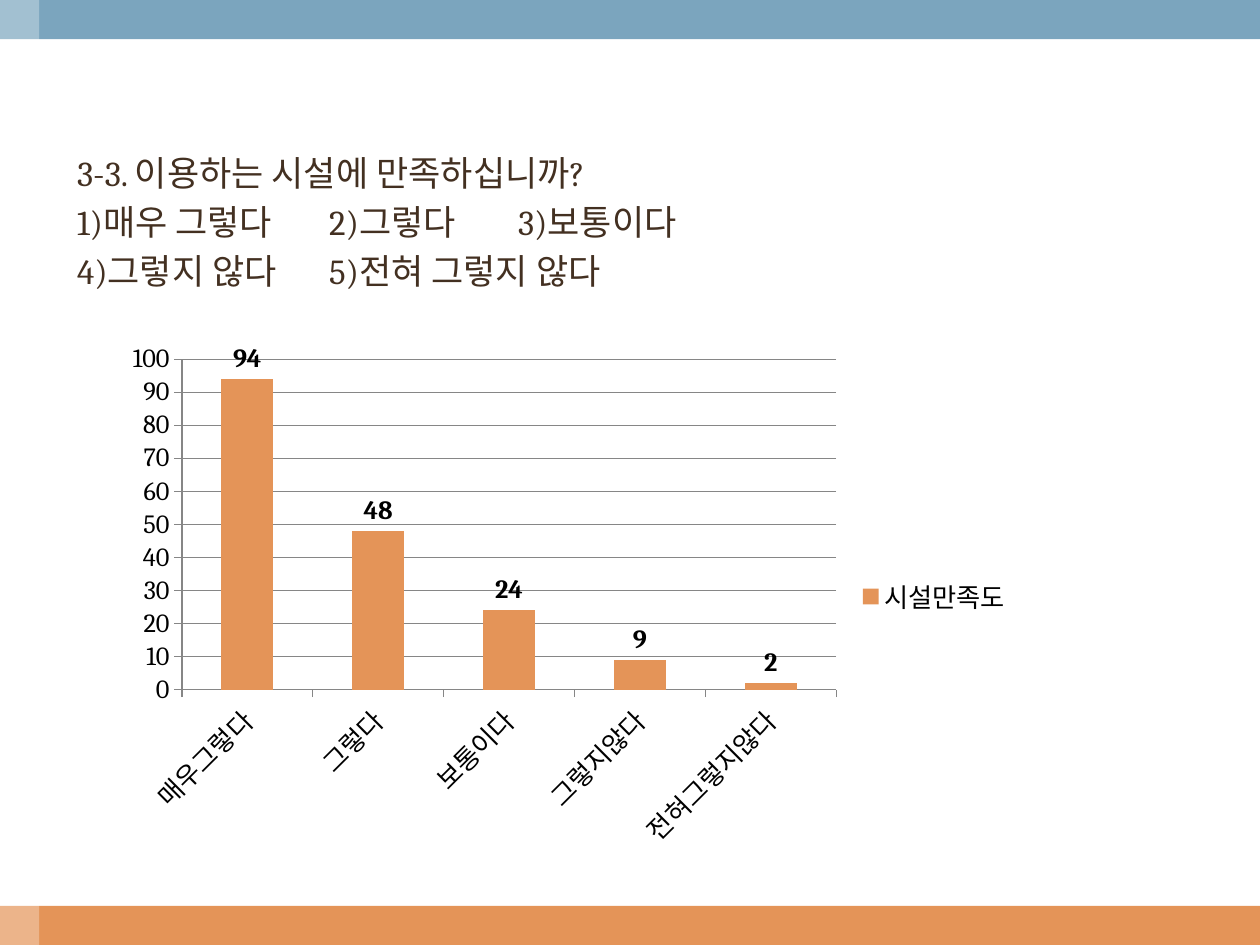
from lxml.etree import SubElement
from pptx import Presentation
from pptx.chart.data import CategoryChartData
from pptx.dml.color import RGBColor
from pptx.enum.chart import XL_CHART_TYPE, XL_LABEL_POSITION, XL_LEGEND_POSITION, XL_TICK_MARK
from pptx.enum.shapes import MSO_SHAPE
from pptx.enum.text import MSO_ANCHOR, MSO_AUTO_SIZE
from pptx.oxml.ns import qn
from pptx.util import Cm, Pt

ORANGE = RGBColor(0xE4, 0x94, 0x58)
BLUE = RGBColor(0x7B, 0xA5, 0xBE)
WHITE = RGBColor(0xFF, 0xFF, 0xFF)
BROWN = RGBColor(0x43, 0x30, 0x21)
BLACK = RGBColor(0, 0, 0)
GRAY = RGBColor(0x86, 0x86, 0x86)
FONT = "Cambria"


def write_line(paragraph, text, size=20, color=BROWN, tabs=()):
    """Write an unbulleted line whose columns start at the given tab stops."""
    run = paragraph.add_run()
    run.text = text
    run.font.name = FONT
    run.font.size = Pt(size)
    run.font.color.rgb = color
    paragraph.space_before = Pt(size * 0.2)
    properties = paragraph._p.get_or_add_pPr()
    properties.set("marL", "0")
    properties.set("indent", "0")
    SubElement(properties, qn("a:buNone"))
    if tabs:
        stops = SubElement(properties, qn("a:tabLst"))
        for position in tabs:
            SubElement(stops, qn("a:tab"), pos=str(Cm(position)), algn="l")


presentation = Presentation()
presentation.slide_width = Cm(25.4)
presentation.slide_height = Cm(19.05)
slide = presentation.slides.add_slide(presentation.slide_layouts[1])
title = slide.shapes.title
title._element.getparent().remove(title._element)

# Bands at the edges, with a pale strip down the left
band = 0.79
for left, top, width, height, color in (
    (0, 19.05 - band, 25.4, band, ORANGE),
    (0, 0, 25.4, band, BLUE),
    (0, 0, band, 19.05, WHITE),
):
    strip = slide.shapes.add_shape(
        MSO_SHAPE.RECTANGLE, Cm(left), Cm(top), Cm(width), Cm(height))
    strip.shadow.inherit = False
    strip.fill.solid()
    strip.fill.fore_color.rgb = color
    strip.line.fill.background()
strip_color = strip.fill._xPr.find(qn("a:solidFill"))[0]
SubElement(strip_color, qn("a:alpha"), val="30000")

# Question and its answer options
question = slide.placeholders[1]
question.left, question.top = Cm(1.3), Cm(1.93)
question.width, question.height = Cm(22.86), Cm(15.6)
question_frame = question.text_frame
question_frame.auto_size = MSO_AUTO_SIZE.NONE
question_frame.vertical_anchor = MSO_ANCHOR.TOP
question_frame.margin_top = Cm(1.12)
for index, (text, tabs) in enumerate((
    ("3-3. 이용하는 시설에 만족하십니까?", ()),
    ("1)매우 그렇다\t2)그렇다\t3)보통이다", (8.25, 15.1)),
    ("4)그렇지 않다\t5)전혀 그렇지 않다", (7.75,)),
)):
    line = question_frame.add_paragraph() if index else question_frame.paragraphs[0]
    write_line(line, text, tabs=tabs)

# Satisfaction chart
answers = CategoryChartData()
answers.categories = ["매우그렇다", "그렇다", "보통이다", "그렇지않다", "전혀그렇지않다"]
answers.add_series("시설만족도", [94, 48, 24, 9, 2])
chart = slide.shapes.add_chart(
    XL_CHART_TYPE.COLUMN_CLUSTERED, Cm(2.31), Cm(6.73), Cm(18.34), Cm(10.59), answers).chart
chart.has_title = False
chart.font.name = FONT
chart.font.size = Pt(18)
chart.font.color.rgb = BLACK
chart.has_legend = True
chart.legend.position = XL_LEGEND_POSITION.RIGHT
chart.legend.include_in_layout = False
chart.legend.font.size = Pt(15)

for axis in (chart.category_axis, chart.value_axis):
    axis.tick_labels.font.size = Pt(15)
    axis.major_tick_mark = XL_TICK_MARK.OUTSIDE
    axis.format.line.color.rgb = GRAY
chart.value_axis.minimum_scale = 0
chart.value_axis.maximum_scale = 100
chart.value_axis.major_unit = 10
chart.value_axis.major_gridlines.format.line.color.rgb = GRAY

plot = chart.plots[0]
plot.gap_width = 150
plot.vary_by_categories = False
satisfaction = plot.series[0]
satisfaction.format.fill.solid()
satisfaction.format.fill.fore_color.rgb = ORANGE
counts = satisfaction.data_labels
counts.show_value = True
counts.position = XL_LABEL_POSITION.OUTSIDE_END
counts.font.size = Pt(15)
counts.font.bold = True

presentation.save("out.pptx")
